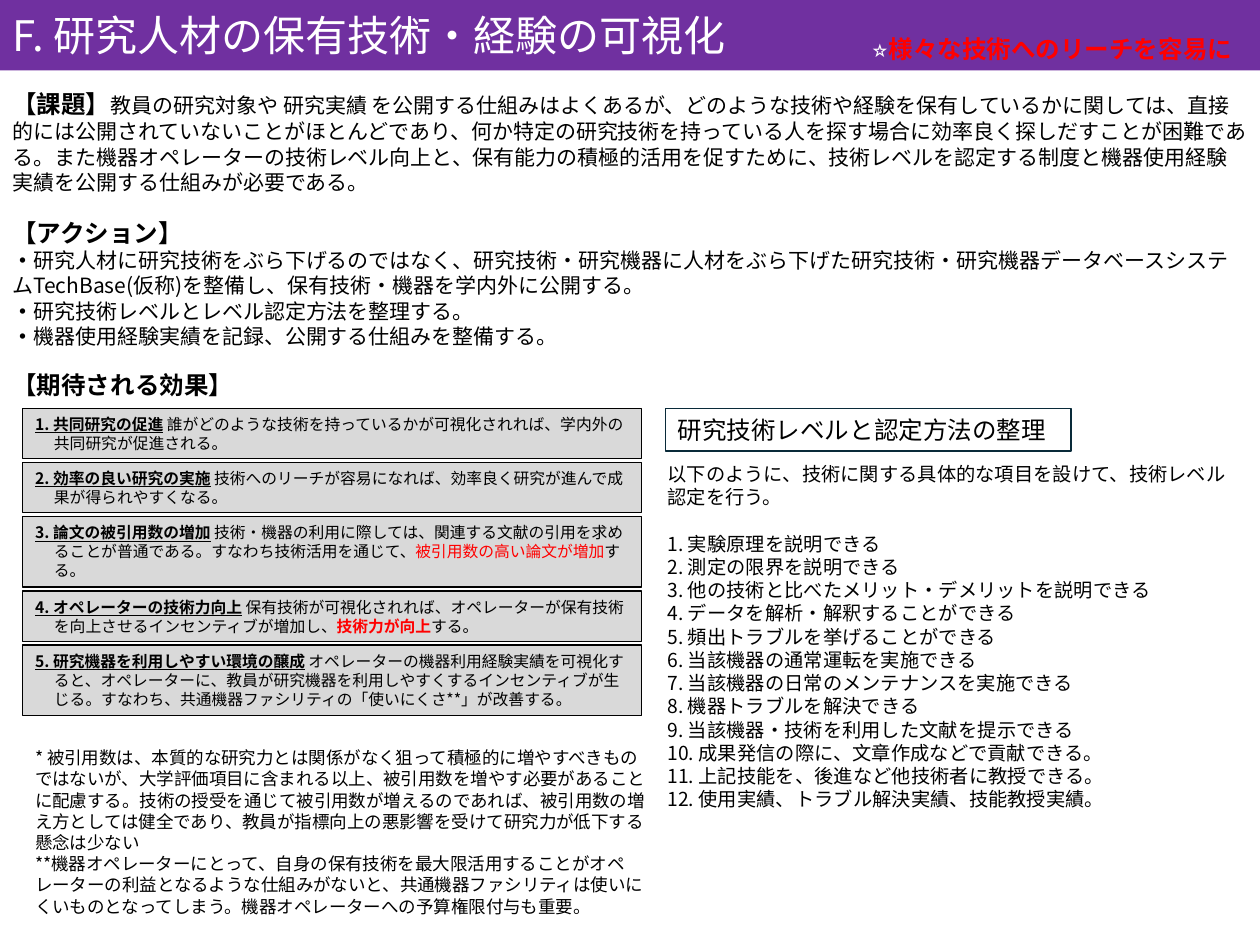
from lxml.etree import SubElement
from pptx import Presentation
from pptx.dml.color import RGBColor
from pptx.enum.shapes import MSO_SHAPE
from pptx.enum.text import MSO_ANCHOR, PP_ALIGN
from pptx.oxml.ns import qn
from pptx.util import Pt

PX = 9144  # 100 px to the inch
FONT = "Noto Sans CJK JP"
PURPLE = RGBColor(0x70, 0x30, 0xA0)
WHITE = RGBColor(0xFF, 0xFF, 0xFF)
BLACK = RGBColor(0x00, 0x00, 0x00)
RED = RGBColor(0xFF, 0x00, 0x00)
GRAY = RGBColor(0xD9, 0xD9, 0xD9)
NAVY = RGBColor(0x09, 0x2A, 0x39)

ISSUE = (
    "教員の研究対象や 研究実績 を公開する仕組みはよくあるが、どのような技術や経験を保有しているかに関しては、"
    "直接的には公開されていないことがほとんどであり、何か特定の研究技術を持っている人を探す場合に"
    "効率良く探しだすことが困難である。また機器オペレーターの技術レベル向上と、保有能力の積極的活用を促すために、"
    "技術レベルを認定する制度と機器使用経験実績を公開する仕組みが必要である。"
)
ACTIONS = [
    "研究人材に研究技術をぶら下げるのではなく、研究技術・研究機器に人材をぶら下げた研究技術・研究機器データベース"
    "システムTechBase(仮称)を整備し、保有技術・機器を学内外に公開する。",
    "研究技術レベルとレベル認定方法を整理する。",
    "機器使用経験実績を記録、公開する仕組みを整備する。",
]
# Height, heading, then the runs of the explanation
EFFECTS = [
    (40, "共同研究の促進",
     [(" 誰がどのような技術を持っているかが可視化されれば、学内外の共同研究が促進される。", {})]),
    (40, "効率の良い研究の実施",
     [(" 技術へのリーチが容易になれば、効率良く研究が進んで成果が得られやすくなる。", {})]),
    (56, "論文の被引用数の増加",
     [(" 技術・機器の利用に際しては、関連する文献の引用を求めることが普通である。すなわち技術活用を通じて、", {}),
      ("被引用数の高い論文が増加", {"color": RED}), ("する。", {})]),
    (40, "オペレーターの技術力向上",
     [(" 保有技術が可視化されれば、オペレーターが保有技術を向上させるインセンティブが増加し、", {}),
      ("技術力が向上", {"color": RED, "bold": True}), ("する。", {})]),
    (56, "研究機器を利用しやすい環境の醸成",
     [(" オペレーターの機器利用経験実績を可視化すると、オペレーターに、教員が研究機器を利用しやすくする"
       "インセンティブが生じる。すなわち、共通機器ファシリティの「使いにくさ**」が改善する。", {})]),
]
NOTES = [
    "* 被引用数は、本質的な研究力とは関係がなく狙って積極的に増やすべきものではないが、大学評価項目に含まれる以上、"
    "被引用数を増やす必要があることに配慮する。技術の授受を通じて被引用数が増えるのであれば、"
    "被引用数の増え方としては健全であり、教員が指標向上の悪影響を受けて研究力が低下する懸念は少ない",
    "**機器オペレーターにとって、自身の保有技術を最大限活用することがオペレーターの利益となるような仕組みがないと、"
    "共通機器ファシリティは使いにくいものとなってしまう。機器オペレーターへの予算権限付与も重要。",
]
LEVEL_INTRO = "以下のように、技術に関する具体的な項目を設けて、技術レベル認定を行う。"
LEVELS = [
    "実験原理を説明できる",
    "測定の限界を説明できる",
    "他の技術と比べたメリット・デメリットを説明できる",
    "データを解析・解釈することができる",
    "頻出トラブルを挙げることができる",
    "当該機器の通常運転を実施できる",
    "当該機器の日常のメンテナンスを実施できる",
    "機器トラブルを解決できる",
    "当該機器・技術を利用した文献を提示できる",
    "成果発信の際に、文章作成などで貢献できる。",
    "上記技能を、後進など他技術者に教授できる。",
    "使用実績、トラブル解決実績、技能教授実績。",
]


def add_text_box(s, x, y, w, h):
    tf = s.shapes.add_textbox(x * PX, y * PX, w * PX, h * PX).text_frame
    tf.word_wrap = True
    return tf


def add_rect(s, x, y, w, h, fill=None, line=None):
    sp = s.shapes.add_shape(MSO_SHAPE.RECTANGLE, x * PX, y * PX, w * PX, h * PX)
    sp.shadow.inherit = False
    if fill is None:
        sp.fill.background()
    else:
        sp.fill.solid()
        sp.fill.fore_color.rgb = fill
    if line is None:
        sp.line.fill.background()
    else:
        sp.line.color.rgb = line
        sp.line.width = Pt(0.75)
    sp.text_frame.word_wrap = True
    sp.text_frame.vertical_anchor = MSO_ANCHOR.TOP
    return sp.text_frame


def add_run(p, text, size, color=BLACK, bold=False, underline=False):
    r = p.add_run()
    r.text = text
    f = r.font
    f.name, f.size, f.bold, f.underline = FONT, Pt(size), bold, underline
    f.color.rgb = color
    SubElement(r._r.get_or_add_rPr(), qn("a:ea")).set("typeface", FONT)


def add_paragraph(tf, runs, size, before=0):
    """Fill the first empty paragraph or append one; runs are (text, style) pairs."""
    p = tf.paragraphs[0]
    if p.runs:
        p = tf.add_paragraph()
    p.alignment = PP_ALIGN.LEFT
    p.line_spacing = Pt(round(size * 1.21, 1))
    p.space_before = Pt(before)
    for text, style in runs:
        add_run(p, text, **{"size": size, **style})
    return p


def add_header(s, x, y, w, h):
    tf = add_rect(s, x, y, w, h, fill=PURPLE)
    tf.vertical_anchor = MSO_ANCHOR.MIDDLE
    add_paragraph(tf, [("F. 研究人材の保有技術・経験の可視化", {"color": WHITE})], 24)
    tf = add_text_box(s, x + 682, y + 23, 324, 34)
    add_paragraph(tf, [("⭐️", {"color": WHITE, "bold": True}),
                       ("様々な技術へのリーチを容易に", {"color": RED, "bold": True})], 14)


def add_overview(s, x, y, w, h):
    tf = add_text_box(s, x, y, w, h)
    tf.margin_top = 9 * PX
    add_paragraph(tf, [("【課題】", {"size": 14, "bold": True}), (ISSUE, {})], 12)
    add_paragraph(tf, [("【アクション】", {"bold": True})], 14, before=13)
    for action in ACTIONS:
        add_paragraph(tf, [("・", {"bold": True}), (action, {})], 12)


def add_effects(s, x, y, w):
    """Heading, then numbered boxes stacked with an equal gap."""
    tf = add_text_box(s, x, y, 215, 34)
    add_paragraph(tf, [("【期待される効果】", {"bold": True})], 14)
    gap, top = 3, y + 35
    for number, (height, heading, runs) in enumerate(EFFECTS, 1):
        tf = add_rect(s, x + 18, top, w, height, fill=GRAY, line=BLACK)
        title = (f"{number}. {heading}", {"bold": True, "underline": True})
        p = add_paragraph(tf, [title, *runs], 9)
        pPr = p._p.get_or_add_pPr()
        pPr.set("marL", str(15 * PX))
        pPr.set("indent", str(-15 * PX))
        top += height + gap


def add_notes(s, x, y, w, h):
    tf = add_text_box(s, x, y, w, h)
    for note in NOTES:
        add_paragraph(tf, [(note, {})], 10)


def add_levels(s, x, y, w, h):
    tf = add_rect(s, x + 8, y, 322, 34, line=NAVY)
    add_paragraph(tf, [("研究技術レベルと認定方法の整理", {})], 14)
    tf = add_text_box(s, x, y + 38, w, h - 38)
    add_paragraph(tf, [(LEVEL_INTRO, {})], 11)
    for number, level in enumerate(LEVELS, 1):
        add_paragraph(tf, [(f"{number}. {level}", {})], 11, before=13 if number == 1 else 0)


def main():
    prs = Presentation()
    prs.slide_width, prs.slide_height = 1000 * PX, 750 * PX
    s = prs.slides.add_slide(prs.slide_layouts[6])
    add_header(s, 0, -1, 1000, 57)
    add_overview(s, 0, 65, 1000, 219)
    add_effects(s, 0, 289, 491)
    add_notes(s, 18, 588, 510, 145)
    add_levels(s, 520, 324, 477, 363)
    prs.save("out.pptx")


if __name__ == "__main__":
    main()
